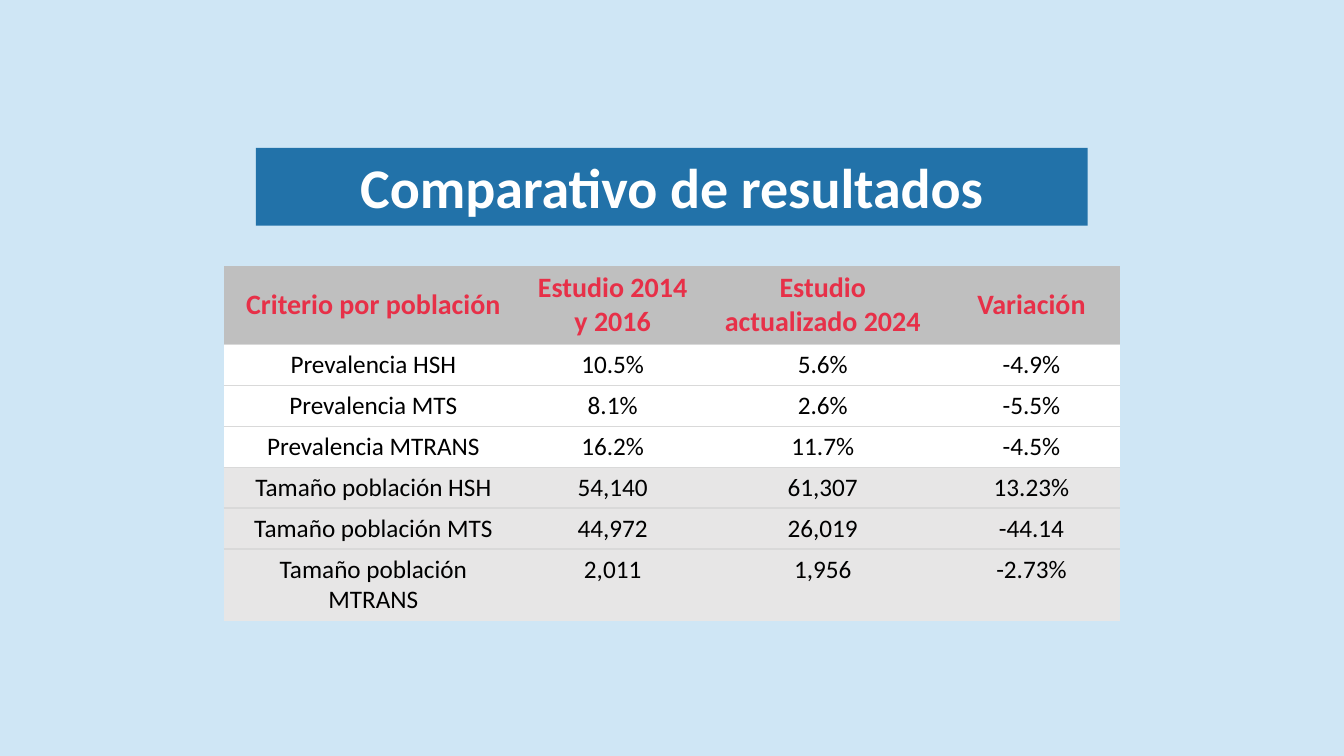
from lxml import etree
from pptx import Presentation
from pptx import util as u
from pptx.dml.color import RGBColor
from pptx.enum import shapes, text
from pptx.oxml.ns import qn

SKY = RGBColor(0xCF, 0xE6, 0xF5)
BLUE = RGBColor(0x22, 0x72, 0xA9)
RED = RGBColor(0xE7, 0x30, 0x48)
GREY = RGBColor(0xBF, 0xBF, 0xBF)
PALE_GREY = RGBColor(0xE7, 0xE6, 0xE6)
LINE_GREY = RGBColor(0xD9, 0xD9, 0xD9)
WHITE = RGBColor(0xFF, 0xFF, 0xFF)
BLACK = RGBColor(0, 0, 0)

HEADER = ("Criterio por población", "Estudio 2014 y 2016",
          "Estudio actualizado 2024", "Variación")
PREVALENCE = [
    ("Prevalencia HSH", "10.5%", "5.6%", "-4.9%"),
    ("Prevalencia MTS", "8.1%", "2.6%", "-5.5%"),
    ("Prevalencia MTRANS", "16.2%", "11.7%", "-4.5%"),
]
POPULATION = [
    ("Tamaño población HSH", "54,140", "61,307", "13.23%"),
    ("Tamaño población MTS", "44,972", "26,019", "-44.14"),
    ("Tamaño población MTRANS", "2,011", "1,956", "-2.73%"),
]
COLUMN_WIDTHS = (7.54, 4.52, 6.07, 4.45)
ROW_HEIGHTS = (1.98, 1.03, 1.03, 1.03, 1.03, 1.03, 1.8)


class SlideBuilder:
    font_name = "Calibri"

    def __init__(self, slide, background):
        self.slide = slide
        slide.background.fill.solid()
        slide.background.fill.fore_color.rgb = background

    def add_text(self, frame, wording, size, color, bold=False):
        paragraph = frame.paragraphs[0]
        paragraph.alignment = text.PP_ALIGN.CENTER
        run = paragraph.add_run()
        run.text = wording
        run.font.name = self.font_name
        run.font.size = u.Pt(size)
        run.font.bold = bold
        run.font.color.rgb = color

    def banner(self, wording, left, top, width, height):
        shape = self.slide.shapes.add_shape(
            shapes.MSO_SHAPE.RECTANGLE, *map(u.Cm, (left, top, width, height)))
        shape.shadow.inherit = False
        shape.fill.solid()
        shape.fill.fore_color.rgb = BLUE
        shape.line.fill.background()
        shape.text_frame.word_wrap = True
        shape.text_frame.vertical_anchor = text.MSO_ANCHOR.TOP
        self.add_text(shape.text_frame, wording, 40, WHITE, bold=True)

    def borders(self, cell, above, below):
        """Draw the chosen horizontal edges and hide the others."""
        properties = cell._tc.get_or_add_tcPr()
        edges = (("a:lnL", False), ("a:lnR", False), ("a:lnT", above), ("a:lnB", below))
        for position, (tag, visible) in enumerate(edges):
            edge = etree.Element(qn(tag), w=str(u.Pt(1)))
            if visible:
                fill = etree.SubElement(edge, qn("a:solidFill"))
                etree.SubElement(fill, qn("a:srgbClr"), val=str(LINE_GREY))
            else:
                etree.SubElement(edge, qn("a:noFill"))
            properties.insert(position, edge)

    def table(self, rows, left, top):
        """Each row is a pair of its fill colour and its values."""
        table = self.slide.shapes.add_table(
            len(rows), len(COLUMN_WIDTHS), u.Cm(left), u.Cm(top),
            u.Cm(sum(COLUMN_WIDTHS)), u.Cm(sum(ROW_HEIGHTS))).table
        for column, width in zip(table.columns, COLUMN_WIDTHS):
            column.width = u.Cm(width)
        for row, height in zip(table.rows, ROW_HEIGHTS):
            row.height = u.Cm(height)
        for row_number, (fill, values) in enumerate(rows):
            is_header = row_number == 0
            for column_number, value in enumerate(values):
                cell = table.cell(row_number, column_number)
                cell.fill.solid()
                cell.fill.fore_color.rgb = fill
                self.borders(cell, not is_header, row_number < len(rows) - 1)
                if is_header:
                    cell.vertical_anchor = text.MSO_ANCHOR.MIDDLE
                    self.add_text(cell.text_frame, value, 20, RED, bold=True)
                else:
                    self.add_text(cell.text_frame, value, 18, BLACK)


def main():
    presentation = Presentation()
    presentation.slide_width = u.Cm(33.87)
    presentation.slide_height = u.Cm(19.05)
    slide = presentation.slides.add_slide(presentation.slide_layouts[6])
    builder = SlideBuilder(slide, SKY)

    # Comparison table
    rows = [(GREY, HEADER)]
    rows += [(WHITE, values) for values in PREVALENCE]
    rows += [(PALE_GREY, values) for values in POPULATION]
    builder.table(rows, 5.64, 6.7)

    # Title
    builder.banner("Comparativo de resultados", 6.45, 3.73, 20.96, 1.96)

    presentation.save("out.pptx")


if __name__ == "__main__":
    main()
